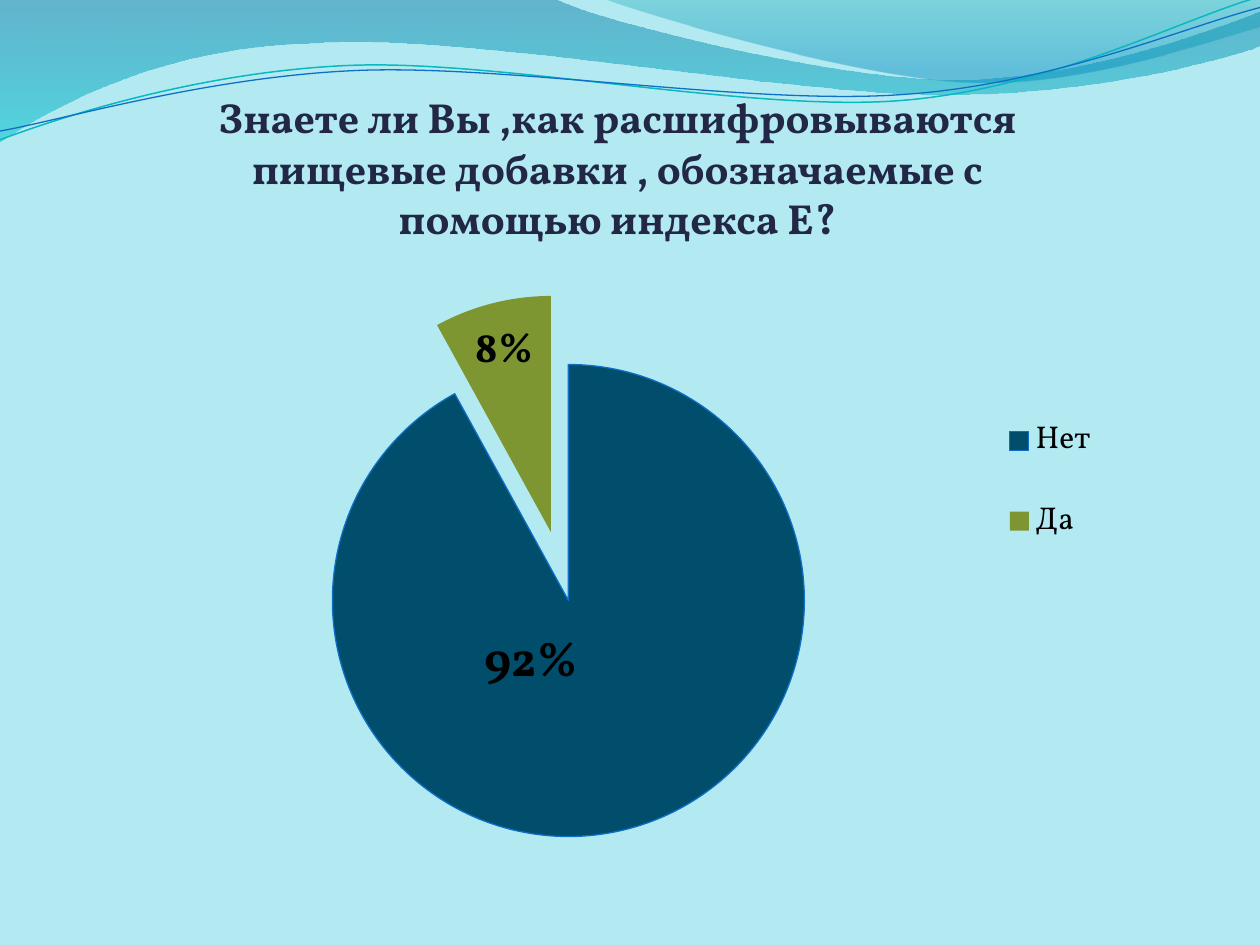
from lxml import etree
from pptx import Presentation
from pptx import util as u
from pptx.chart.data import CategoryChartData
from pptx.dml.color import RGBColor
from pptx.enum import chart as ch, text
from pptx.oxml.ns import qn

W, H = 10, 7.5
FONT = "Vollkorn"
COLORS = {
    "back": "B3EAF2", "title": "212745", "label": "000000",
    "no": "004E6C", "yes": "7E9632", "blue": "0F6FC6", "teal": "0AB8BF",
    "wave_top": "0074A1", "wave_end": "00C6CF",
    "corner_top": "00A1A9", "corner_end": "008BBF",
}

# Outlines in inches: a pair is a straight step, six numbers a Bézier curve
WAVE = [(0, 0), (4.4, -0.01), (4.76, 0.17, 6.64, 0.63, 7.58, 0.63),
        (8.53, 0.63, 9.58, 0.26, 10, 0.09), (10.01, 0.36),
        (9.83, 0.44, 8.7, 0.76, 7.46, 0.75), (6.22, 0.75, 3.82, 0.28, 2.57, 0.34),
        (1.29, 0.36, 0.46, 0.83, -0.01, 1.13)]
CORNER = [(4.79, -0.01), (5.09, 0.11, 6.82, 0.62, 7.69, 0.65),
          (8.56, 0.69, 9.61, 0.32, 10, 0.21), (10, 0)]
TEAL_LINE = [(0, 1.11), (0.48, 0.93, 1.58, 0.57, 2.77, 0.52),
             (3.95, 0.47, 5.93, 0.89, 7.13, 0.8), (8.33, 0.71, 9.38, 0.15, 9.98, -0.02)]
BLUE_LINE = [(0, 1.04), (0.47, 0.96, 1.64, 0.61, 2.83, 0.56),
             (4.03, 0.51, 5.97, 0.84, 7.17, 0.75), (8.36, 0.67, 9.41, 0.21, 10, 0.06)]


def rgb(name):
    return RGBColor.from_string(COLORS[name])


def add_outline(s, outline, close):
    points = [(u.Inches(part[i]), u.Inches(part[i + 1]))
              for part in outline for i in range(0, len(part), 2)]
    builder = s.shapes.build_freeform(*points[0], scale=1.0)
    builder.add_line_segments(points[1:], close=close)
    sp = builder.convert_to_shape()
    sp.shadow.inherit = False
    # Join each three steps of a curve into one Bézier segment
    steps = iter(sp._element.findall(".//" + qn("a:lnTo")))
    for part in outline[1:]:
        group = [next(steps) for _ in range(len(part) // 2)]
        if len(group) == 3:
            curve = etree.Element(qn("a:cubicBezTo"))
            group[0].addprevious(curve)
            for step in group:
                curve.append(step[0])
                step.getparent().remove(step)
    return sp


def add_wave(s, outline, stops):
    sp = add_outline(s, outline, True)
    sp.line.fill.background()
    sp.fill.gradient()
    sp.fill.gradient_angle = 270
    for stop, (position, color, alpha) in zip(sp.fill.gradient_stops, stops):
        stop.position = position
        stop.color.rgb = rgb(color)
    for clr, (_, _, alpha) in zip(sp._element.spPr.iter(qn("a:srgbClr")), stops):
        etree.SubElement(clr, qn("a:alpha")).set("val", str(alpha * 1000))


def add_curve(s, outline, color, width):
    sp = add_outline(s, outline, False)
    sp.fill.background()
    sp.line.color.rgb = rgb(color)
    sp.line.width = u.Pt(width)


def style_font(font, size, color, bold=False):
    font.name, font.size, font.bold = FONT, u.Pt(size), bold
    font.color.rgb = rgb(color)


def set_title(s, words):
    sp = s.shapes.title
    sp.left, sp.top, sp.width, sp.height = map(u.Inches, (1.06, 0.68, 7.56, 1.31))
    tf = sp.text_frame
    tf.word_wrap = True
    tf.auto_size = text.MSO_AUTO_SIZE.SHAPE_TO_FIT_TEXT
    tf.vertical_anchor = text.MSO_ANCHOR.TOP
    p = tf.paragraphs[0]
    p.alignment = text.PP_ALIGN.CENTER
    p.space_before = u.Pt(5)
    p._p.get_or_add_pPr().set("marL", str(u.Inches(0.12)))
    r = p.add_run()
    r.text = words
    style_font(r.font, 24, "title", True)


def manual_layout(**values):
    layout = etree.Element(qn("c:layout"))
    manual = etree.SubElement(layout, qn("c:manualLayout"))
    for key, value in values.items():
        etree.SubElement(manual, qn("c:" + key)).set("val", str(value))
    return layout


def drop_layout(parent):
    for old in parent.findall(qn("c:layout")):
        parent.remove(old)


def style_slice(series, index, color, size, position, dx, dy):
    point = series.points[index]
    point.format.fill.solid()
    point.format.fill.fore_color.rgb = rgb(color)
    label = point.data_label
    style_font(label.font, size, "label", True)
    label.position = position
    # Show the share and shift the label from its standard place
    dLbl = series._element.findall(".//" + qn("c:dLbl"))[index]
    dLbl.find(qn("c:showVal")).set("val", "0")
    dLbl.find(qn("c:showPercent")).set("val", "1")
    dLbl.find(qn("c:idx")).addnext(manual_layout(x=dx, y=dy))


def add_pie(s):
    data = CategoryChartData()
    data.categories = ["Нет", "Да"]
    data.add_series("Series 1", (92, 8))
    box = map(u.Inches, (1.38, 1.99, 7.56, 5.01))
    chart = s.shapes.add_chart(ch.XL_CHART_TYPE.PIE, *box, data).chart
    chart.has_title = False
    style_font(chart.font, 18, "label")

    # Slices and labels
    plot = chart.plots[0]
    plot.vary_by_categories = True
    series = plot.series[0]
    labels = series.data_labels
    labels.show_value, labels.show_percentage = False, True
    labels.number_format, labels.number_format_is_linked = "0%", False
    place = ch.XL_LABEL_POSITION
    style_slice(series, 0, "no", 28, place.CENTER, -0.07, -0.08)
    style_slice(series, 1, "yes", 24, place.INSIDE_END, -0.02, 0.02)
    line = series.points[0].format.line
    line.color.rgb = rgb("blue")
    line.width = u.Pt(0.75)
    explosion = etree.Element(qn("c:explosion"))
    explosion.set("val", "15")
    series._element.find(qn("c:tx")).addnext(explosion)

    # Plot area and legend
    area = chart._chartSpace.find(".//" + qn("c:plotArea"))
    drop_layout(area)
    area.insert(0, manual_layout(layoutTarget="inner", xMode="edge", yMode="edge",
                                 x=0, y=0.07, w=0.81, h=0.86))
    chart.has_legend = True
    legend = chart.legend
    legend.position = ch.XL_LEGEND_POSITION.RIGHT
    legend.include_in_layout = False
    style_font(legend.font, 18, "label")
    drop_layout(legend._element)
    legend._element.find(qn("c:legendPos")).addnext(
        manual_layout(xMode="edge", yMode="edge", x=0.86, y=0.21, w=0.12, h=0.31))


def main():
    prs = Presentation()
    prs.slide_width, prs.slide_height = u.Inches(W), u.Inches(H)
    s = prs.slides.add_slide(prs.slide_layouts[5])
    s.background.fill.solid()
    s.background.fill.fore_color.rgb = rgb("back")

    # Waves along the top
    add_wave(s, WAVE, [(0, "wave_top", 45), (1, "wave_end", 55)])
    add_wave(s, CORNER, [(0, "corner_top", 30), (0.8, "corner_end", 45)])
    add_curve(s, TEAL_LINE, "teal", 0.85)
    add_curve(s, BLUE_LINE, "blue", 0.75)

    # Question and answers
    set_title(s, "Знаете ли Вы ,как расшифровываются пищевые добавки , "
                 "обозначаемые с помощью индекса Е?")
    add_pie(s)
    prs.save("out.pptx")


if __name__ == "__main__":
    main()
